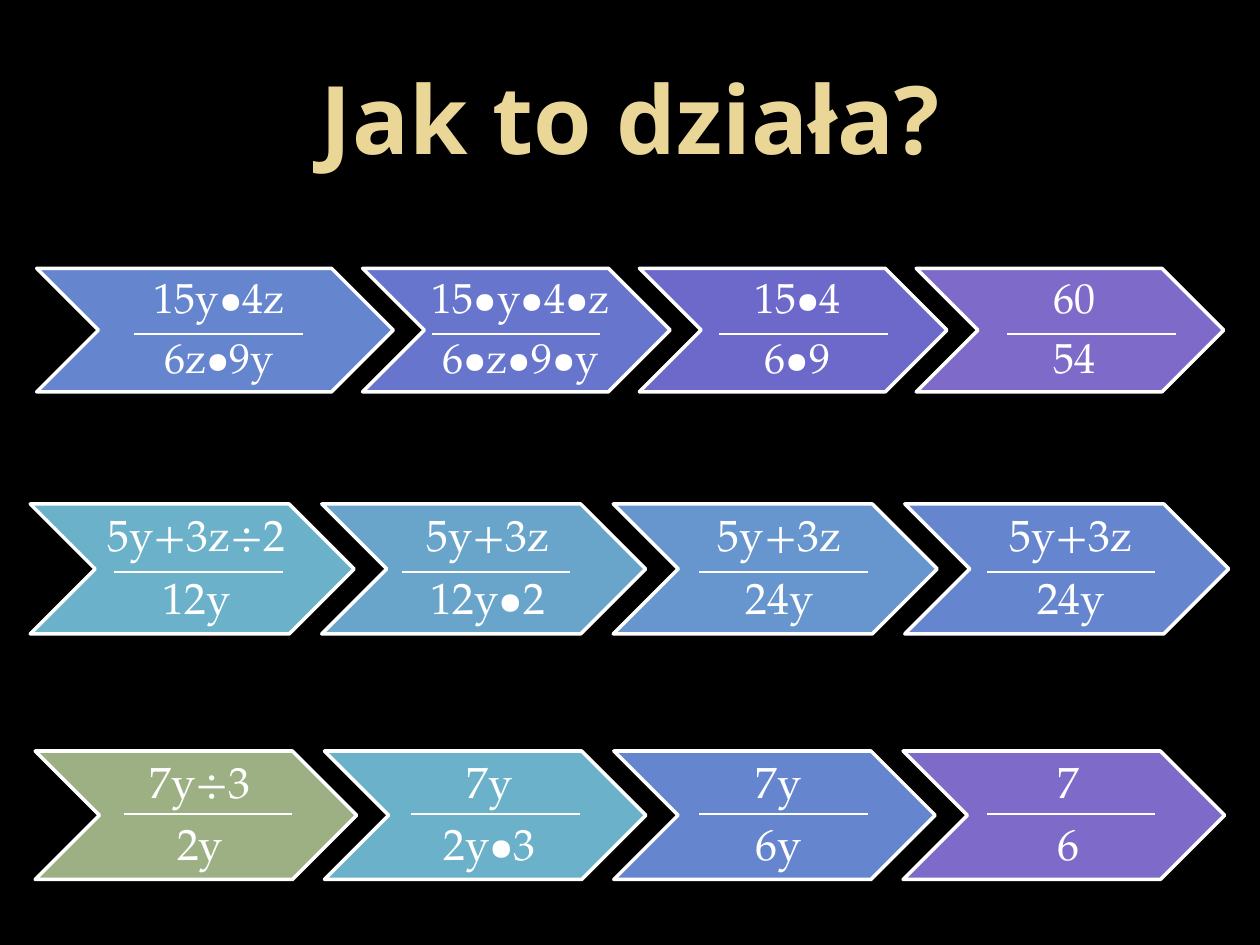
from dataclasses import dataclass

from lxml import etree
from pptx import Presentation
from pptx import util as u
from pptx.dml.color import RGBColor
from pptx.enum import shapes, text
from pptx.oxml import ns


@dataclass(frozen=True)
class Theme:
    background: str = "000000"
    title: str = "EAD696"
    white: str = "FFFFFF"
    sage: str = "9CB084"
    teal: str = "6BB1C9"
    sky: str = "69A4CB"
    azure: str = "6795CD"
    blue: str = "6585CF"
    indigo: str = "6775CD"
    iris: str = "6C69CB"
    violet: str = "7E6BC9"
    title_font: str = "Noto Sans"
    formula_font: str = "TeX Gyre Pagella"
    title_size: float = 54
    first_size: float = 24
    formula_size: float = 25
    outline: float = 2
    bar: float = 1.5


@dataclass(frozen=True)
class Row:
    left: float
    top: float
    first_width: float
    width: float
    height: float
    size: float
    bar_top: float
    bar_lefts: tuple
    steps: tuple


THEME = Theme()
OVERLAP = 0.1
BAR_LENGTH = 3.4

ROWS = (
    Row(0.71, 15.14, 6.48, 6.48, 2.59, THEME.formula_size, 16.41,
        (2.49, 8.29, 14.09, 19.89),
        (("7y÷3", "2y", THEME.sage), ("7y", "2y∙3", THEME.teal),
         ("7y", "6y", THEME.blue), ("7", "6", THEME.violet))),
    Row(0.61, 10.16, 6.53, 6.53, 2.62, THEME.formula_size, 11.53,
        (2.3, 8.1, 14.1, 19.89),
        (("5y+3z÷2", "12y", THEME.teal), ("5y+3z", "12y∙2", THEME.sky),
         ("5y+3z", "24y", THEME.azure), ("5y+3z", "24y", THEME.blue))),
    Row(0.74, 5.41, 7.19, 6.2, 2.49, THEME.first_size, 6.73,
        (2.7, 8.7, 14.5, 20.3),
        (("15y∙4z", "6z∙9y", THEME.blue), ("15∙y∙4∙z", "6∙z∙9∙y", THEME.indigo),
         ("15∙4", "6∙9", THEME.iris), ("60", "54", THEME.violet))),
)


def color(value):
    return RGBColor.from_string(value)


def style_paragraph(paragraph, font_name, size, font_color):
    paragraph.alignment = text.PP_ALIGN.CENTER
    paragraph.font.name = font_name
    paragraph.font.size = u.Pt(size)
    paragraph.font.color.rgb = color(font_color)


def add_title(slide, wording):
    box = slide.shapes.add_textbox(u.Cm(1.27), u.Cm(0.76), u.Cm(22.86), u.Cm(3.18))
    frame = box.text_frame
    frame.word_wrap = True
    frame.vertical_anchor = text.MSO_ANCHOR.MIDDLE
    paragraph = frame.paragraphs[0]
    paragraph.text = wording
    style_paragraph(paragraph, THEME.title_font, THEME.title_size, THEME.title)
    paragraph.font.bold = True


def add_chevron(group, row, left, width, numerator, denominator, fill):
    shape = group.shapes.add_shape(
        shapes.MSO_SHAPE.CHEVRON, u.Cm(left), u.Cm(row.top), u.Cm(width), u.Cm(row.height))
    shape.shadow.inherit = False
    shape.fill.solid()
    shape.fill.fore_color.rgb = color(fill)
    shape.line.color.rgb = color(THEME.white)
    shape.line.width = u.Pt(THEME.outline)
    frame = shape.text_frame
    frame.word_wrap = False
    frame.vertical_anchor = text.MSO_ANCHOR.MIDDLE
    frame.margin_left = u.Cm(0.27)
    frame.margin_right = frame.margin_top = frame.margin_bottom = u.Cm(0.1)
    frame.text = f"{numerator}\n{denominator}"
    for paragraph in frame.paragraphs:
        style_paragraph(paragraph, THEME.formula_font, row.size, THEME.white)
        paragraph.line_spacing = 0.9
        paragraph.space_after = u.Pt(row.size * 0.35)


def add_fraction_bar(group, left, top):
    bar = group.shapes.add_connector(
        shapes.MSO_CONNECTOR.STRAIGHT,
        u.Cm(left), u.Cm(top), u.Cm(left + BAR_LENGTH), u.Cm(top))
    bar.line.color.rgb = color(THEME.white)
    bar.line.width = u.Pt(THEME.bar)
    etree.SubElement(bar._element.spPr, ns.qn("a:effectLst"))


def add_row(slide, row):
    group = slide.shapes.add_group_shape()
    left = row.left
    for index, step in enumerate(row.steps):
        width = row.width if index else row.first_width
        add_chevron(group, row, left, width, *step)
        left += width - OVERLAP * row.width
    for bar_left in row.bar_lefts:
        add_fraction_bar(group, bar_left, row.bar_top)


def main():
    presentation = Presentation()
    presentation.slide_width = u.Cm(25.4)
    presentation.slide_height = u.Cm(19.05)
    slide = presentation.slides.add_slide(presentation.slide_layouts[6])
    slide.background.fill.solid()
    slide.background.fill.fore_color.rgb = color(THEME.background)
    add_title(slide, "Jak to działa?")
    for row in ROWS:
        add_row(slide, row)
    presentation.save("out.pptx")


if __name__ == "__main__":
    main()
